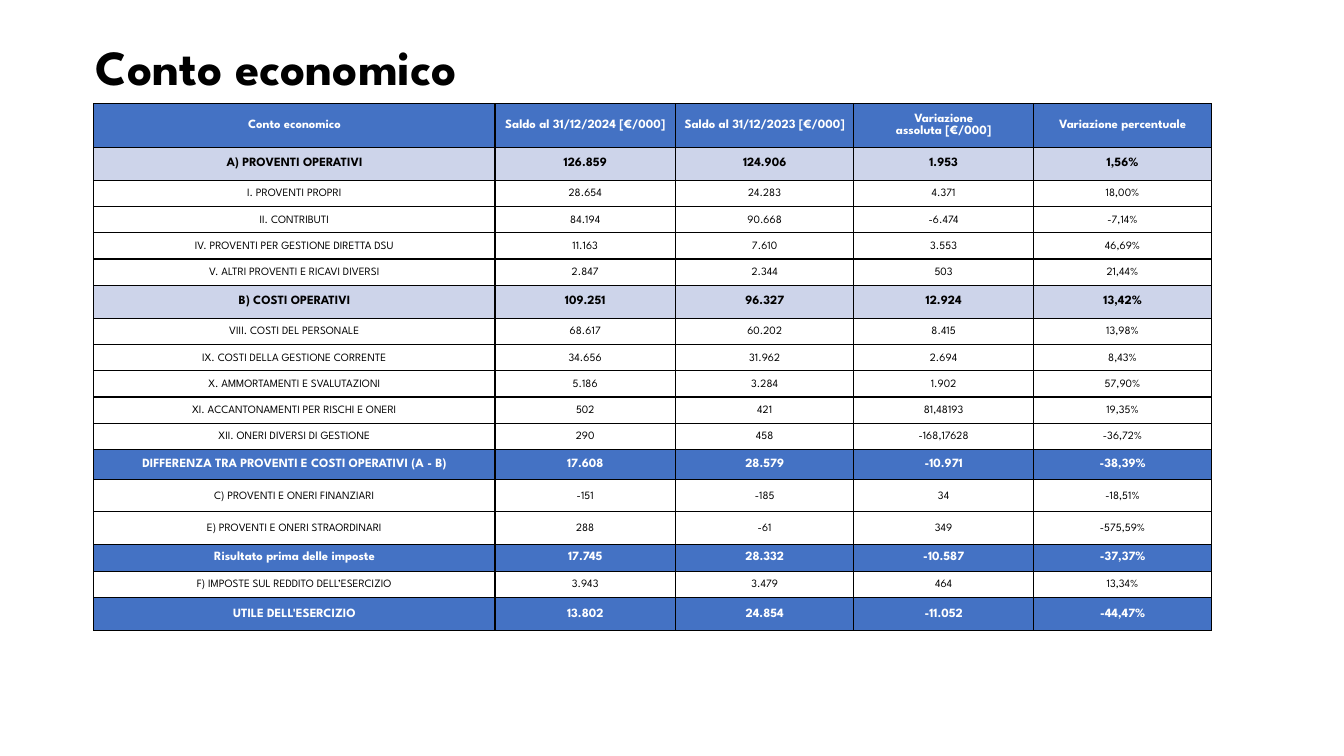
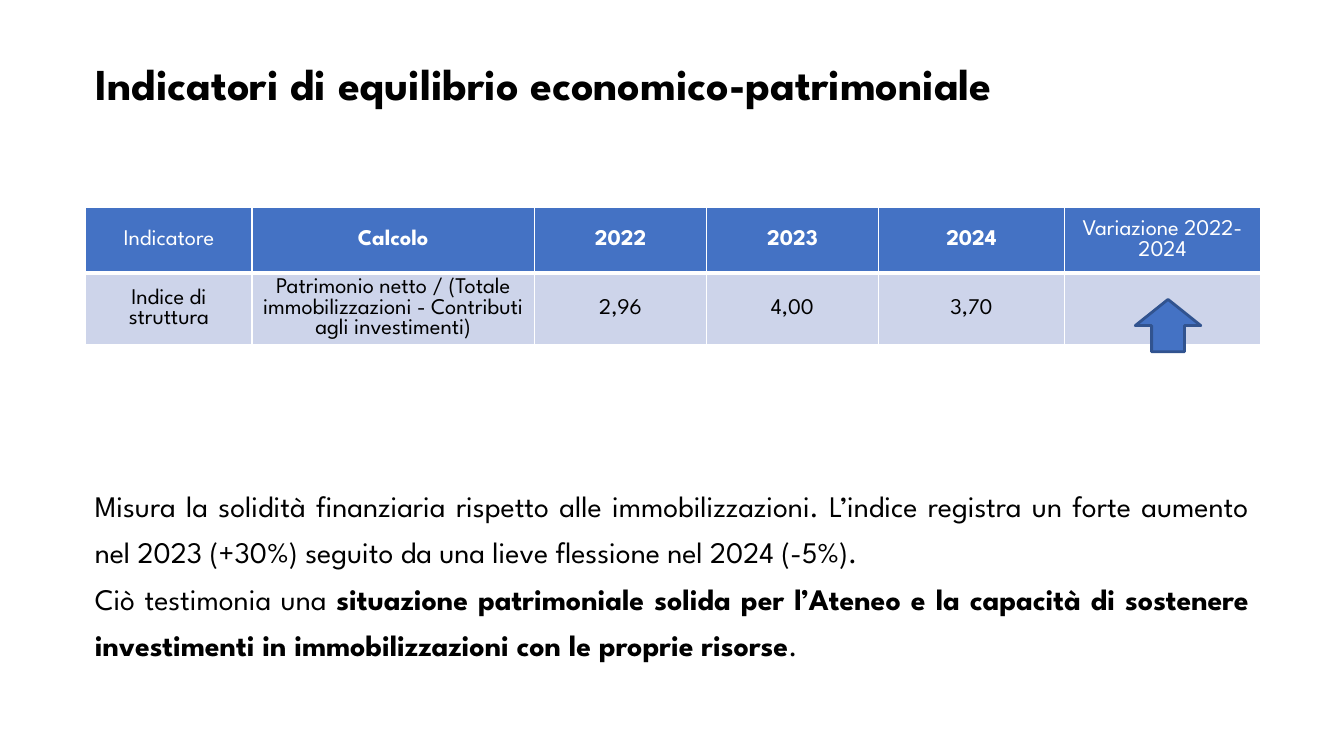
import dataclasses

import lxml.etree
import pptx
import pptx.dml.color
import pptx.enum.shapes
import pptx.enum.text
import pptx.oxml.ns
import pptx.util

Inches = pptx.util.Inches
Pt = pptx.util.Pt
ALIGN = pptx.enum.text.PP_ALIGN
ANCHOR = pptx.enum.text.MSO_ANCHOR


@dataclasses.dataclass(frozen=True)
class Theme:
    font: str = "League Spartan"
    black: str = "000000"
    white: str = "FFFFFF"
    blue: str = "4472C4"
    pale_blue: str = "CDD4EA"
    dark_blue: str = "31538F"
    title_size: float = 35
    long_title_size: float = 31.5
    body_size: float = 21.3
    indicator_size: float = 16
    total_size: float = 9
    detail_size: float = 8


THEME = Theme()


def write(frame, text, *, size, color=THEME.black, bold=False, align=ALIGN.LEFT,
          anchor=ANCHOR.TOP, spacing=1.0):
    """Fill a text frame; each line is a paragraph, and ** switches bold on and off."""
    frame.word_wrap = True
    frame.vertical_anchor = anchor
    for index, line in enumerate(text.split("\n")):
        para = frame.paragraphs[0] if index == 0 else frame.add_paragraph()
        para.alignment = align
        para.line_spacing = spacing
        para.space_before = para.space_after = Pt(0)
        for part, piece in enumerate(line.split("**")):
            span = para.add_run()
            span.text = piece
            span.font.name = THEME.font
            span.font.size = Pt(size)
            span.font.bold = bold != (part % 2 == 1)
            span.font.color.rgb = pptx.dml.color.RGBColor.from_string(color)


def format_cell(cell, text, *, fill, border, widths, margins, **text_format):
    """Style a table cell; widths are the left, right, top and bottom borders in points."""
    cell.margin_left = cell.margin_right = Inches(margins[0])
    cell.margin_top = cell.margin_bottom = Inches(margins[1])
    cell.vertical_anchor = ANCHOR.MIDDLE
    properties = cell._tc.get_or_add_tcPr()
    for side, width in zip("LRTB", widths):
        line = lxml.etree.SubElement(properties, pptx.oxml.ns.qn(f"a:ln{side}"), w=str(Pt(width)))
        solid = lxml.etree.SubElement(line, pptx.oxml.ns.qn("a:solidFill"))
        lxml.etree.SubElement(solid, pptx.oxml.ns.qn("a:srgbClr"), val=border)
    cell.fill.solid()
    cell.fill.fore_color.rgb = pptx.dml.color.RGBColor.from_string(fill)
    if text:
        write(cell.text_frame, text, align=ALIGN.CENTER, anchor=ANCHOR.MIDDLE, **text_format)


deck = pptx.Presentation()
deck.slide_width, deck.slide_height = Inches(13.33), Inches(7.5)

# Titles
pages = []
for layout, top, size, heading in [
    (5, 0.38, THEME.title_size, "Conto economico"),
    (1, 0.57, THEME.long_title_size, "Indicatori di equilibrio economico-patrimoniale"),
]:
    page = deck.slides.add_slide(deck.slide_layouts[layout])
    title = page.shapes.title
    title.left, title.top = Inches(0.85), Inches(top)
    title.width, title.height = Inches(11.65), Inches(1.09)
    title.text_frame.auto_size = pptx.enum.text.MSO_AUTO_SIZE.NONE
    write(title.text_frame, heading, size=size, bold=True, spacing=0.9)
    pages.append(page)
income_page, indicator_page = pages

# Income statement
TOTAL = dict(fill=THEME.blue, color=THEME.white, size=THEME.total_size, bold=True)
SECTION = dict(TOTAL, fill=THEME.pale_blue, color=THEME.black)
DETAIL = dict(fill=THEME.white, size=THEME.detail_size, spacing=1.15)

income_rows = [
    (TOTAL, 0.43, ["Conto economico", "Saldo al 31/12/2024 [€/000]", "Saldo al 31/12/2023 [€/000]",
                   "Variazione\nassoluta [€/000]", "Variazione percentuale"]),
    (SECTION, 0.33, ["A) PROVENTI OPERATIVI", "126.859", "124.906", "1.953", "1,56%"]),
    (DETAIL, 0.26, ["I. PROVENTI PROPRI", "28.654", "24.283", "4.371", "18,00%"]),
    (DETAIL, 0.26, ["II. CONTRIBUTI", "84.194", "90.668", "-6.474", "-7,14%"]),
    (DETAIL, 0.26, ["IV. PROVENTI PER GESTIONE DIRETTA DSU", "11.163", "7.610", "3.553", "46,69%"]),
    (DETAIL, 0.26, ["V. ALTRI PROVENTI E RICAVI DIVERSI", "2.847", "2.344", "503", "21,44%"]),
    (SECTION, 0.33, ["B) COSTI OPERATIVI", "109.251", "96.327", "12.924", "13,42%"]),
    (DETAIL, 0.26, ["VIII. COSTI DEL PERSONALE", "68.617", "60.202", "8.415", "13,98%"]),
    (DETAIL, 0.26, ["IX. COSTI DELLA GESTIONE CORRENTE", "34.656", "31.962", "2.694", "8,43%"]),
    (DETAIL, 0.26, ["X. AMMORTAMENTI E SVALUTAZIONI", "5.186", "3.284", "1.902", "57,90%"]),
    (DETAIL, 0.26, ["XI. ACCANTONAMENTI PER RISCHI E ONERI", "502", "421", "81,48193", "19,35%"]),
    (DETAIL, 0.26, ["XII. ONERI DIVERSI DI GESTIONE", "290", "458", "-168,17628", "-36,72%"]),
    (TOTAL, 0.3, ["DIFFERENZA TRA PROVENTI E COSTI OPERATIVI (A - B)",
                  "17.608", "28.579", "-10.971", "-38,39%"]),
    (DETAIL, 0.32, ["C) PROVENTI E ONERI FINANZIARI", "-151", "-185", "34", "-18,51%"]),
    (DETAIL, 0.32, ["E) PROVENTI E ONERI STRAORDINARI", "288", "-61", "349", "-575,59%"]),
    (TOTAL, 0.27, ["Risultato prima delle imposte", "17.745", "28.332", "-10.587", "-37,37%"]),
    (DETAIL, 0.26, ["F) IMPOSTE SUL REDDITO DELL’ESERCIZIO", "3.943", "3.479", "464", "13,34%"]),
    (TOTAL, 0.33, ["UTILE DELL'ESERCIZIO", "13.802", "24.854", "-11.052", "-44,47%"]),
]
income_frame = dict(border=THEME.black, widths=[(0.94,) * 4] * len(income_rows), margins=(0.03, 0.05))

# Structure indicator
HEADER = dict(fill=THEME.blue, color=THEME.white, size=THEME.indicator_size)
VALUE = dict(fill=THEME.pale_blue, size=THEME.indicator_size)

indicator_rows = [
    (HEADER, 0.65, ["Indicatore", "**Calcolo**", "**2022**", "**2023**", "**2024**",
                    "Variazione 2022-2024"]),
    (VALUE, 0.71, ["Indice di struttura",
                   "Patrimonio netto / (Totale immobilizzazioni - Contributi agli investimenti)",
                   "2,96", "4,00", "3,70", ""]),
]
indicator_frame = dict(border=THEME.white, widths=[(1, 1, 1, 3), (1, 1, 3, 1)], margins=(0.1, 0.05))

# Tables
for page, left, top, columns, rows, frame in [
    (income_page, 0.93, 1.03, [3.98, 1.79, 1.77, 1.78, 1.77], income_rows, income_frame),
    (indicator_page, 0.85, 2.06, [1.65, 2.8, 1.71, 1.7, 1.85, 1.94], indicator_rows, indicator_frame),
]:
    height = sum(row_height for _, row_height, _ in rows)
    table = page.shapes.add_table(len(rows), len(columns), Inches(left), Inches(top),
                                  Inches(sum(columns)), Inches(height)).table
    table.first_row = table.horz_banding = False
    for column, width in zip(table.columns, columns):
        column.width = Inches(width)
    for row, widths, (style, row_height, texts) in zip(table.rows, frame["widths"], rows):
        row.height = Inches(row_height)
        for cell, text in zip(row.cells, texts):
            format_cell(cell, text, **dict(frame, widths=widths), **style)

# Trend arrow
arrow = indicator_page.shapes.add_shape(pptx.enum.shapes.MSO_SHAPE.UP_ARROW, Inches(11.26),
                                        Inches(2.97), Inches(0.65), Inches(0.52))
arrow.shadow.inherit = False
arrow.fill.solid()
arrow.fill.fore_color.rgb = pptx.dml.color.RGBColor.from_string(THEME.blue)
arrow.line.color.rgb = pptx.dml.color.RGBColor.from_string(THEME.dark_blue)
arrow.line.width = Pt(2)

# Comment on the indicator
comment = indicator_page.placeholders[1]
comment.left, comment.top = Inches(0.84), Inches(4.68)
comment.width, comment.height = Inches(11.65), Inches(1.58)
comment.text_frame.auto_size = pptx.enum.text.MSO_AUTO_SIZE.NONE
write(comment.text_frame,
      "Misura la solidità finanziaria rispetto alle immobilizzazioni. L’indice registra un forte "
      "aumento nel 2023 (+30%) seguito da una lieve flessione nel 2024 (-5%).\n"
      "Ciò testimonia una **situazione patrimoniale solida per l’Ateneo e la capacità di sostenere "
      "investimenti in immobilizzazioni con le proprie risorse**.",
      size=THEME.body_size, align=ALIGN.JUSTIFY, spacing=1.3)
for para in comment.text_frame.paragraphs:
    properties = para._p.get_or_add_pPr()
    properties.set("marL", "0")
    properties.set("indent", "0")
    lxml.etree.SubElement(properties, pptx.oxml.ns.qn("a:buNone"))

deck.save("out.pptx")
